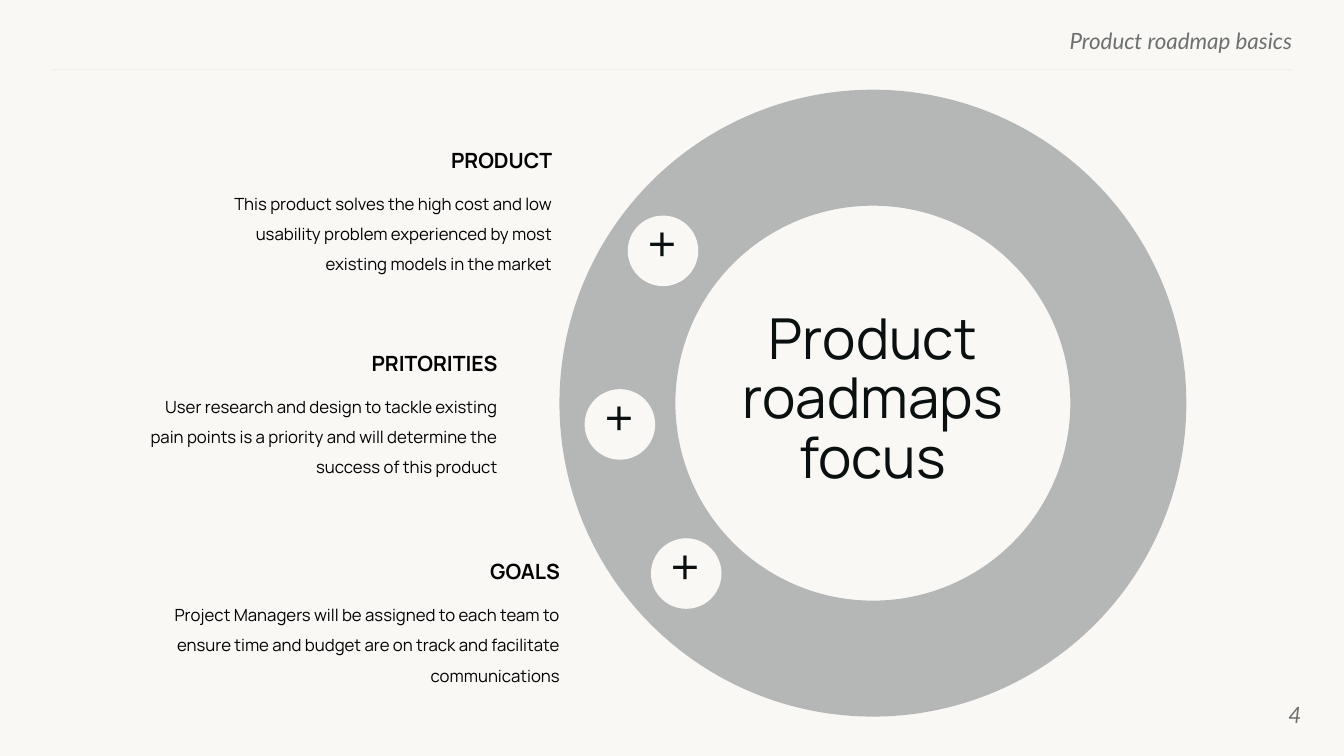
from pptx import Presentation
from pptx.dml.color import RGBColor
from pptx.enum.shapes import MSO_CONNECTOR, MSO_SHAPE
from pptx.enum.text import MSO_ANCHOR, MSO_AUTO_SIZE, PP_ALIGN
from pptx.oxml import parse_xml
from pptx.oxml.ns import nsdecls
from pptx.util import Pt

PAPER = RGBColor(0xF9, 0xF8, 0xF5)
RULE = RGBColor(0xEF, 0xEF, 0xEF)
RING = RGBColor(0xB5, 0xB7, 0xB7)
MUTED = RGBColor(0x6C, 0x70, 0x6F)
INK = RGBColor(0x09, 0x10, 0x0F)
BLACK = RGBColor(0x00, 0x00, 0x00)

MARKER_SIZE = 50.4
HEADING_WIDTH, HEADING_HEIGHT = 139, 17.3
BODY_DROP, BODY_HEIGHT = 25.2, 58.3

# Heading, description, right edge, top, description width
TOPICS = [
    ("PRODUCT", "This product solves the high cost and low usability problem "
     "experienced by most existing models in the market", 394.4, 105.8, 245.5),
    ("PRITORITIES", "User research and design to tackle existing pain points is "
     "a priority and will determine the success of this product", 355.4, 250.6, 253.4),
    ("GOALS", "Project Managers will be assigned to each team to ensure time and "
     "budget are on track and facilitate communications", 400, 399.6, 282.2),
]
MARKERS = [(448.4, 154), (417.6, 278), (465, 384.5)]


def fill_text(holder, text, size, color, font="Manrope", align=PP_ALIGN.RIGHT,
              anchor=MSO_ANCHOR.TOP, bold=False, italic=False, spacing=1.0):
    frame = holder.text_frame
    frame.text = text
    frame.word_wrap = True
    frame.auto_size = MSO_AUTO_SIZE.NONE
    frame.vertical_anchor = anchor
    frame.margin_left = frame.margin_right = frame.margin_top = frame.margin_bottom = 0
    paragraph = frame.paragraphs[0]
    paragraph.alignment = align
    paragraph.line_spacing = spacing
    style = paragraph.font
    style.name, style.size, style.color.rgb = font, Pt(size), color
    style.bold, style.italic = bold, italic


def add_text(slide, left, top, width, height, text, size, color, **options):
    box = slide.shapes.add_textbox(Pt(left), Pt(top), Pt(width), Pt(height))
    fill_text(box, text, size, color, **options)


def add_round(slide, preset, left, top, diameter, color):
    shape = slide.shapes.add_shape(preset, Pt(left), Pt(top), Pt(diameter), Pt(diameter))
    shape.shadow.inherit = False
    shape.fill.solid()
    shape.fill.fore_color.rgb = color
    shape.line.fill.background()
    return shape


def add_header(slide):
    add_text(slide, 553, 19.4, 370, 17.3, "Product roadmap basics", 16, MUTED,
             font="Lato", italic=True)
    rule = slide.shapes.add_connector(MSO_CONNECTOR.STRAIGHT,
                                      Pt(923), Pt(49.7), Pt(37.4), Pt(49.7))
    rule.line.color.rgb = RULE
    rule.line.width = Pt(0.75)
    rule._element.spPr.append(parse_xml(f"<a:effectLst {nsdecls('a')}/>"))


def add_topic(slide, heading, description, right, top, width):
    add_text(slide, right - HEADING_WIDTH, top, HEADING_WIDTH, HEADING_HEIGHT,
             heading, 15, BLACK, anchor=MSO_ANCHOR.MIDDLE, bold=True)
    add_text(slide, right - width, top + BODY_DROP, width, BODY_HEIGHT,
             description, 12, BLACK, spacing=1.5)


def add_marker(slide, left, top):
    """Draw a disc on the ring with a plus sign over it."""
    add_round(slide, MSO_SHAPE.OVAL, left, top, MARKER_SIZE, PAPER)
    add_text(slide, left - 6, top + 2.5, 61.2, 33, "+", 37, INK,
             align=PP_ALIGN.CENTER, spacing=0.9)


def place_title(slide):
    title = slide.shapes.title
    title.left, title.top, title.width, title.height = Pt(507.6), Pt(222.5), Pt(231.8), Pt(141.8)
    fill_text(title, "Product roadmaps focus", 40.3, INK,
              align=PP_ALIGN.CENTER, spacing=0.88)
    # Bring the title in front of the ring
    slide.shapes._spTree.append(title._element)


def main():
    deck = Presentation()
    deck.slide_width, deck.slide_height = Pt(960), Pt(540)
    slide = deck.slides.add_slide(deck.slide_layouts[5])
    slide.background.fill.solid()
    slide.background.fill.fore_color.rgb = PAPER

    add_header(slide)
    add_text(slide, 871.9, 489.6, 57.6, 41, "4", 16, MUTED, font="Lato",
             anchor=MSO_ANCHOR.MIDDLE, italic=True)
    for topic in TOPICS:
        add_topic(slide, *topic)
    ring = add_round(slide, MSO_SHAPE.DONUT, 399.6, 64.1, 447.8, RING)
    ring.adjustments[0] = 0.185
    place_title(slide)
    for left, top in MARKERS:
        add_marker(slide, left, top)

    deck.save("out.pptx")


if __name__ == "__main__":
    main()
